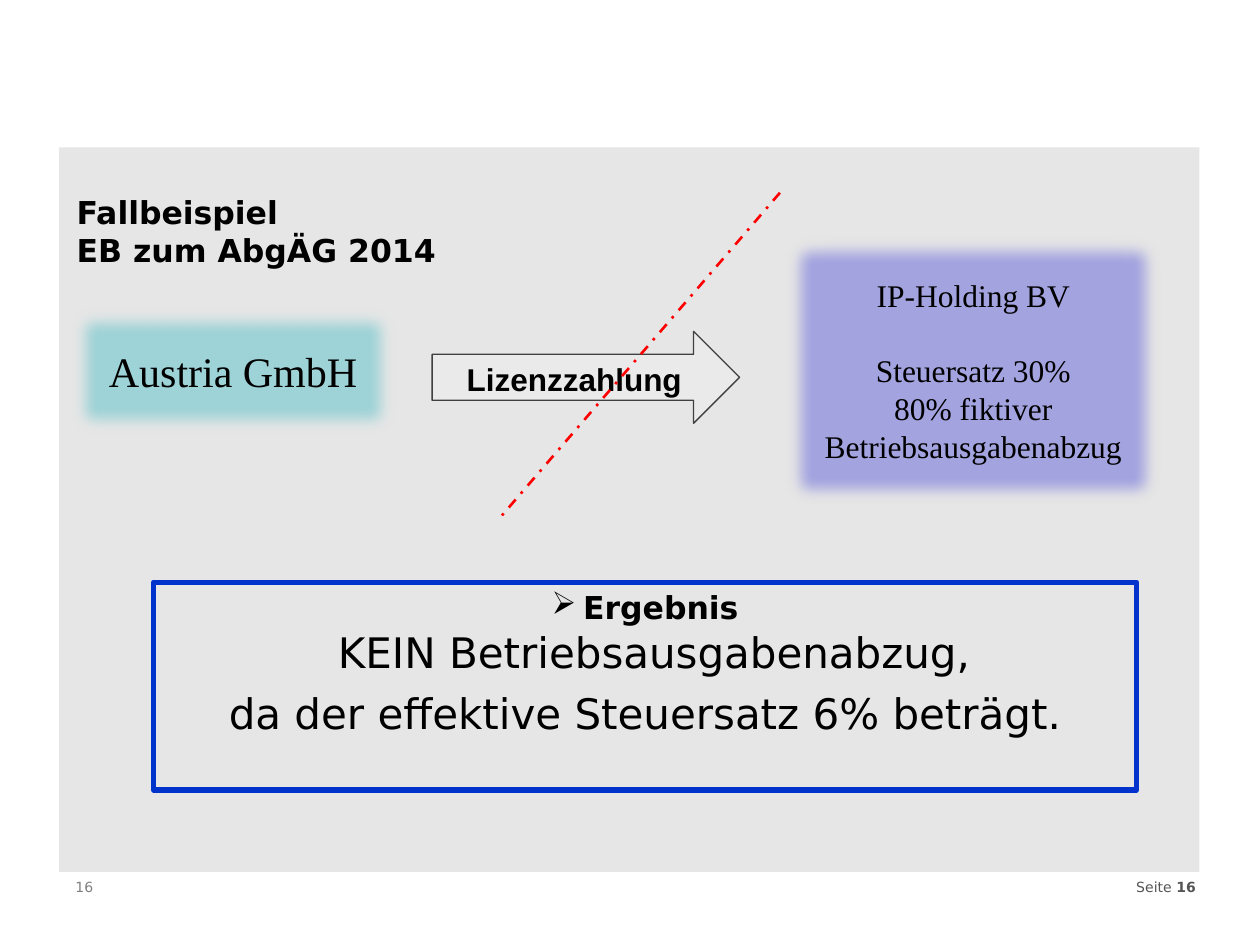
import pptx
import pptx.util
import pptx.dml.color
import pptx.enum.dml
import pptx.enum.shapes
import pptx.enum.text
import pptx.oxml
import pptx.oxml.ns

# Look of the slide
theme = {
    "panel": "E6E6E6", "payer": "9ED3D7", "holder": "A3A3E0",
    "arrow": "EAEAEA", "edge": "404040", "frame": "0033CC",
    "split": "FF0000", "ink": "000000", "page": "808080", "side": "555555",
    "sans": "DejaVu Sans", "serif": "Times New Roman", "label": "Arial",
    "small": 8, "text": 18, "large": 24,
}
kind = pptx.enum.shapes.MSO_SHAPE
align = pptx.enum.text.PP_ALIGN
anchor = pptx.enum.text.MSO_ANCHOR
color = pptx.dml.color.RGBColor.from_string
point = pptx.util.Pt

# Grid of 100 columns by 75 rows
deck = pptx.Presentation()
deck.slide_width = pptx.util.Inches(10)
deck.slide_height = pptx.util.Inches(7.5)
slide = deck.slides.add_slide(deck.slide_layouts[6])
col = deck.slide_width / 100
row = deck.slide_height / 75


def box(form, left, top, width, height, fill=None, line=None, weight=1):
    """Add a shape on the grid, with its text set to wrap."""
    shape = slide.shapes.add_shape(form, int(left * col), int(top * row),
                                   int(width * col), int(height * row))
    shape.shadow.inherit = False
    if fill:
        shape.fill.solid()
        shape.fill.fore_color.rgb = color(theme[fill])
    else:
        shape.fill.background()
    if line:
        shape.line.color.rgb = color(theme[line])
        shape.line.width = point(weight)
    else:
        shape.line.fill.background()
    shape.text_frame.word_wrap = True
    shape.text_frame.vertical_anchor = anchor.TOP
    shape.text_frame.paragraphs[0].alignment = align.CENTER
    return shape


def write(para, text, size="text", face="sans", ink="ink", bold=False):
    """Add one run to a paragraph."""
    run = para.add_run()
    run.text = text
    run.font.size = point(theme[size])
    run.font.name = theme[face]
    run.font.bold = bold
    run.font.color.rgb = color(theme[ink])


# Grey panel
box(kind.RECTANGLE, 4.7, 11.7, 90.5, 57.5, "panel")

# Title
title = box(kind.RECTANGLE, 5.1, 13.6, 75.6, 9.4).text_frame
title.vertical_anchor = anchor.MIDDLE
para = title.paragraphs[0]
para.alignment = align.LEFT
write(para, "Fallbeispiel ", bold=True)
para.add_line_break()
write(para, "EB zum AbgÄG 2014", bold=True)

# Page numbers
para = box(kind.RECTANGLE, 5, 69.2, 22.5, 4.2).text_frame.paragraphs[0]
para.alignment = align.LEFT
write(para, "16", "small", ink="page")
para = box(kind.RECTANGLE, 81.7, 69.2, 14.2, 2.3).text_frame.paragraphs[0]
para.alignment = align.RIGHT
write(para, "Seite ", "small", ink="side")
write(para, "16", "small", ink="side", bold=True)

# The two firms, with soft edges; each line has its space before
firms = [
    ((5.1, 23.9, 26.8, 11.1), "payer", "large", [("Austria GmbH", 0)]),
    ((61.9, 18.3, 30.7, 22.2), "holder", "text",
     [("IP-Holding BV", 0), ("Steuersatz 30%", 21),
      ("80% fiktiver Betriebsausgabenabzug", 0)]),
]
for area, fill, size, lines in firms:
    firm = box(kind.RECTANGLE, *area, fill)
    effect = firm._element.spPr.find(pptx.oxml.ns.qn("a:effectLst"))
    effect.append(pptx.oxml.parse_xml(
        f'<a:softEdge {pptx.oxml.ns.nsdecls("a")} rad="127000"/>'))
    frame = firm.text_frame
    frame.vertical_anchor = anchor.MIDDLE
    for spot, (text, gap) in enumerate(lines):
        para = frame.add_paragraph() if spot else frame.paragraphs[0]
        para.alignment = align.CENTER
        if gap:
            para.space_before = point(gap)
        write(para, text, size, "serif")

# Payment arrow
arrow = box(kind.RIGHT_ARROW, 34.3, 26.3, 24.4, 7.3, "arrow", "edge", 0.75)
write(arrow.text_frame.paragraphs[0], "Lizenzzahlung", face="label", bold=True)

# Result
frame = box(kind.RECTANGLE, 12.2, 46.2, 78, 16.5,
            line="frame", weight=3).text_frame
para = frame.paragraphs[0]
props = para._p.get_or_add_pPr()
props.set("marL", str(int(2.5 * col)))
props.set("indent", str(int(-2.5 * col)))
props.append(pptx.oxml.parse_xml(
    f'<a:buChar {pptx.oxml.ns.nsdecls("a")} char="➢"/>'))
write(para, "Ergebnis", bold=True)
para.add_line_break()
write(para, "KEIN Betriebsausgabenabzug, ", "large")
para = frame.add_paragraph()
para.alignment = align.CENTER
para.space_before = point(6)
write(para, "da der effektive Steuersatz 6% beträgt.", "large")

# Dividing line
split = slide.shapes.add_connector(
    pptx.enum.shapes.MSO_CONNECTOR.STRAIGHT,
    int(61.9 * col), int(15.3 * row), int(39.5 * col), int(41.3 * row))
split.line.color.rgb = color(theme["split"])
split.line.width = point(1.5)
split.line.dash_style = pptx.enum.dml.MSO_LINE.DASH_DOT
split._element.spPr.append(pptx.oxml.parse_xml(
    f'<a:effectLst {pptx.oxml.ns.nsdecls("a")}/>'))

deck.save("out.pptx")
